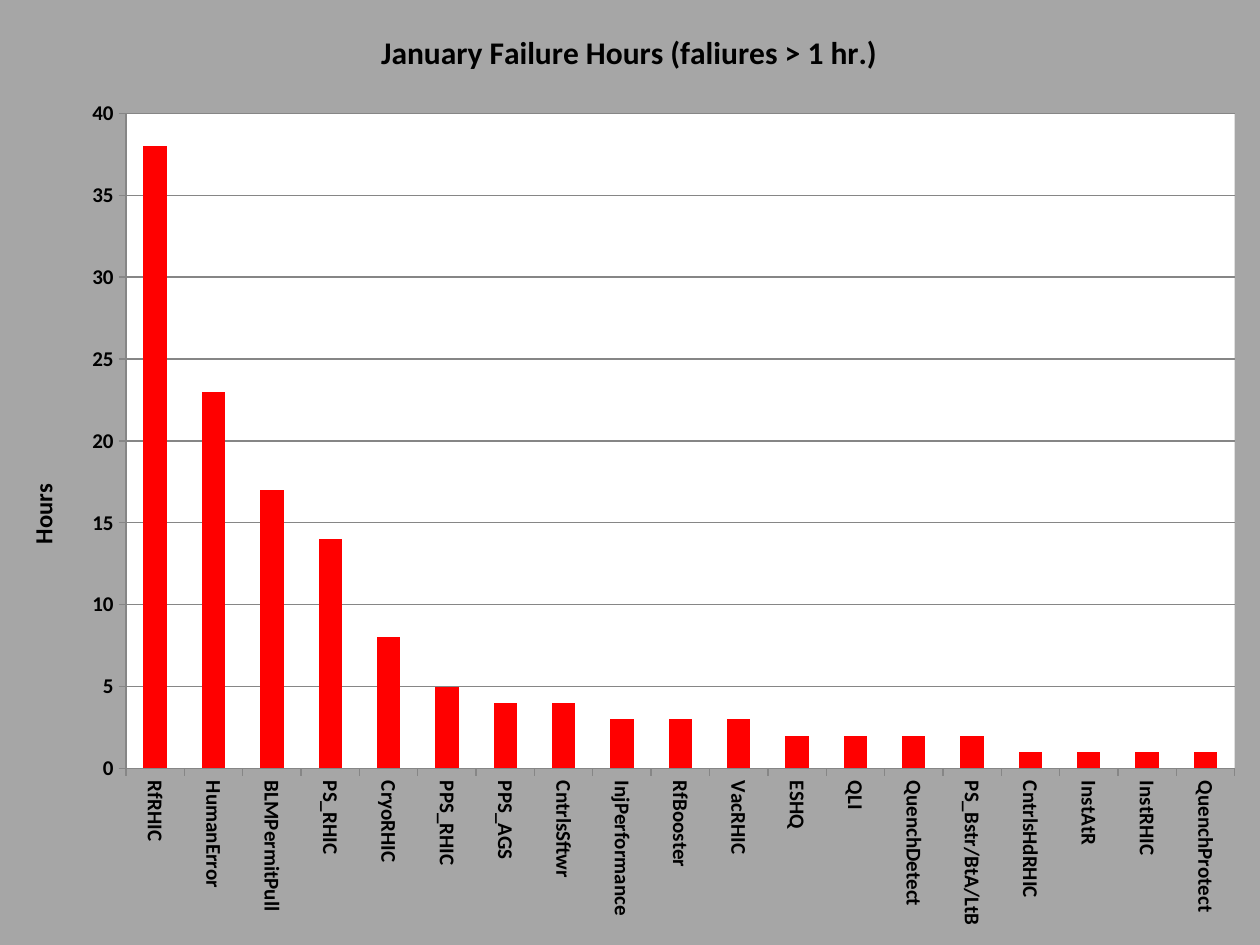
from dataclasses import dataclass

from lxml import etree
from pptx import Presentation
from pptx import util as u
from pptx.chart.data import CategoryChartData
from pptx.dml.color import RGBColor
from pptx.enum import chart as ch
from pptx.oxml import parse_xml
from pptx.oxml.ns import nsdecls, qn

SLIDE_WIDTH, SLIDE_HEIGHT = u.Inches(10), u.Inches(7.5)


@dataclass(frozen=True)
class Theme:
    font: str = "Calibri"
    ink: str = "000000"
    backdrop: str = "A6A6A6"
    plot: str = "FFFFFF"
    bar: str = "FF0000"
    line: str = "868686"
    heading_size: int = 18
    axis_title_size: int = 14
    label_size: int = 12
    base_size: int = 10
    line_width: float = 0.75


FAILURE_HOURS = {
    "RfRHIC": 38, "HumanError": 23, "BLMPermitPull": 17, "PS_RHIC": 14,
    "CryoRHIC": 8, "PPS_RHIC": 5, "PPS_AGS": 4, "CntrlsSftwr": 4,
    "InjPerformance": 3, "RfBooster": 3, "VacRHIC": 3, "ESHQ": 2,
    "QLI": 2, "QuenchDetect": 2, "PS_Bstr/BtA/LtB": 2,
    "CntrlsHdRHIC": 1, "InstAtR": 1, "InstRHIC": 1, "QuenchProtect": 1,
}


def area_fill(color):
    return parse_xml(
        f'<c:spPr {nsdecls("c", "a")}><a:solidFill><a:srgbClr val="{color}"/>'
        '</a:solidFill><a:ln><a:noFill/></a:ln></c:spPr>')


def manual_layout(left, top, width=None, height=None):
    """Place a part of the slide-filling chart; a size means the inner plot."""
    layout = parse_xml(f'<c:layout {nsdecls("c")}><c:manualLayout/></c:layout>')
    settings = {"layoutTarget": "inner"} if width else {}
    settings.update(xMode="edge", yMode="edge",
                    x=left / SLIDE_WIDTH, y=top / SLIDE_HEIGHT)
    if width:
        settings.update(w=width / SLIDE_WIDTH, h=height / SLIDE_HEIGHT)
    for tag, value in settings.items():
        etree.SubElement(layout[0], qn(f"c:{tag}")).set("val", str(value))
    return layout


def set_layout(parent, index, layout):
    for old in parent.findall(qn("c:layout")):
        parent.remove(old)
    parent.insert(index, layout)


class SlideBuilder:
    def __init__(self, slide, theme):
        self.slide = slide
        self.theme = theme

    def style_font(self, font, size, bold=True):
        font.name = self.theme.font
        font.size = u.Pt(size)
        font.bold = bold
        font.color.rgb = RGBColor.from_string(self.theme.ink)

    def style_line(self, line):
        line.color.rgb = RGBColor.from_string(self.theme.line)
        line.width = u.Pt(self.theme.line_width)

    def title(self, title, wording, size, left, top, rotation=0):
        """Fill and place a chart title or an axis title."""
        frame = title.text_frame
        frame.text = wording
        self.style_font(frame.paragraphs[0].font, size)
        body = frame._txBody.find(qn("a:bodyPr"))
        body.set("rot", str(rotation * 60000))
        body.set("vert", "horz")
        set_layout(title._element, 1, manual_layout(left, top))

    def axis(self, axis, label_rotation=0):
        axis.major_tick_mark = ch.XL_TICK_MARK.OUTSIDE
        axis.minor_tick_mark = ch.XL_TICK_MARK.NONE
        self.style_line(axis.format.line)
        self.style_font(axis.tick_labels.font, self.theme.label_size)
        body = axis._element.find(qn("c:txPr")).find(qn("a:bodyPr"))
        body.set("rot", str(label_rotation * 60000))
        body.set("vert", "horz")

    def column_chart(self, values):
        data = CategoryChartData()
        data.categories = list(values)
        data.add_series("Series 1", list(values.values()))
        chart = self.slide.shapes.add_chart(
            ch.XL_CHART_TYPE.COLUMN_CLUSTERED, u.Inches(0), u.Inches(0),
            SLIDE_WIDTH, SLIDE_HEIGHT, data).chart
        chart.has_legend = False
        self.style_font(chart.font, self.theme.base_size, bold=False)

        # Bars
        bars = chart.plots[0]
        bars.gap_width = 150
        bars.vary_by_categories = False
        fill = bars.series[0].format.fill
        fill.solid()
        fill.fore_color.rgb = RGBColor.from_string(self.theme.bar)

        # Backgrounds and plot position
        chart_area = chart._chartSpace.find(qn("c:chart"))
        chart_area.addnext(area_fill(self.theme.backdrop))
        plot_area = chart_area.find(qn("c:plotArea"))
        plot_area.append(area_fill(self.theme.plot))
        set_layout(plot_area, 0, manual_layout(
            u.Inches(1), u.Inches(0.9), u.Inches(8.8), u.Inches(5.2)))
        return chart


def main():
    theme = Theme()
    deck = Presentation()
    deck.slide_width, deck.slide_height = SLIDE_WIDTH, SLIDE_HEIGHT
    builder = SlideBuilder(deck.slides.add_slide(deck.slide_layouts[6]), theme)

    # Full-slide chart
    failures = builder.column_chart(FAILURE_HOURS)
    builder.title(failures.chart_title, "January Failure Hours (faliures > 1 hr.)",
                  theme.heading_size, u.Inches(2.98), u.Inches(0.2))

    # Axes
    builder.axis(failures.category_axis, label_rotation=90)
    hours = failures.value_axis
    builder.axis(hours)
    hours.minimum_scale, hours.maximum_scale, hours.major_unit = 0, 40, 5
    hours.has_major_gridlines = True
    builder.style_line(hours.major_gridlines.format.line)
    builder.title(hours.axis_title, "Hours", theme.axis_title_size,
                  u.Inches(0.17), u.Inches(3.8), rotation=-90)

    deck.save("out.pptx")


if __name__ == "__main__":
    main()
